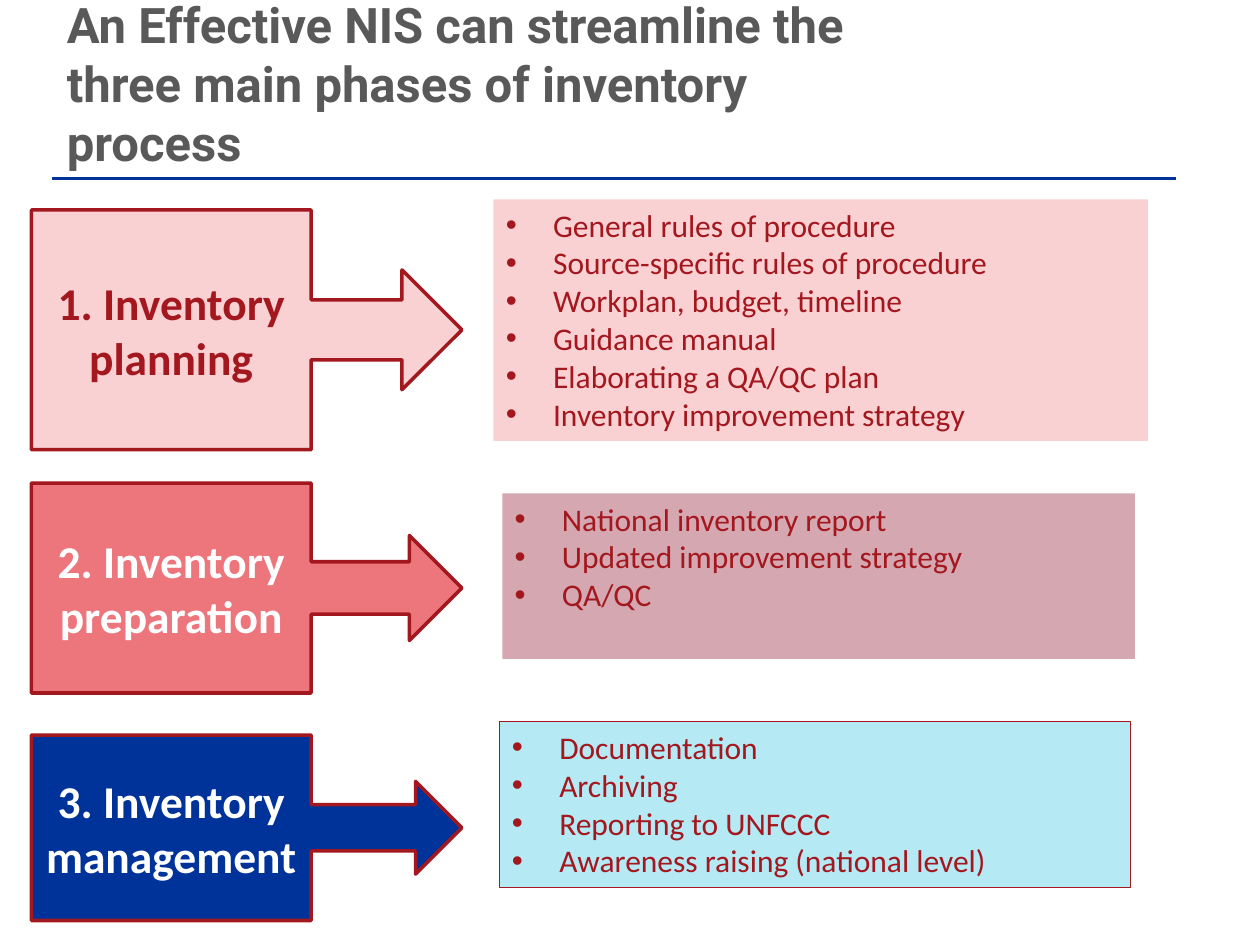
from lxml.etree import SubElement
from pptx import Presentation
from pptx.dml.color import RGBColor
from pptx.enum.shapes import MSO_CONNECTOR, MSO_SHAPE
from pptx.enum.text import MSO_ANCHOR, MSO_AUTO_SIZE, PP_ALIGN
from pptx.oxml.ns import qn
from pptx.util import Pt

COLORS = {
    "gray": "595959", "blue": "003399", "red": "A3171E", "white": "FFFFFF",
    "pink": "F9D1D3", "coral": "EC767C", "mauve": "D5A7B1", "sky": "B5E9F4",
}

# Each phase: heading, heading color, callout fill, callout box,
# list fill, list line width, list box, list items
PHASES = [
    ("1. Inventory planning", "red", "pink", (18, 120, 246, 137),
     "pink", 0, (282, 114, 374, 138),
     ["General rules of procedure", "Source-specific rules of procedure",
      "Workplan, budget, timeline", "Guidance manual",
      "Elaborating a QA/QC plan", "Inventory improvement strategy"]),
    ("2. Inventory preparation", "white", "coral", (18, 276, 246, 120),
     "mauve", 0, (287, 282, 361.5, 94.5),
     ["National inventory report", "Updated improvement strategy", "QA/QC"]),
    ("3. Inventory management", "white", "blue", (18, 420, 246, 106),
     "sky", 0.75, (285.5, 412.5, 360.5, 94.5),
     ["Documentation", "Archiving", "Reporting to UNFCCC",
      "Awareness raising (national level)"]),
]


def color(name):
    return RGBColor.from_string(COLORS[name])


def place(shape, box):
    shape.left, shape.top, shape.width, shape.height = map(Pt, box)


def add_bullet(para):
    """Give a paragraph a round bullet with a hanging indent."""
    props = para._p.get_or_add_pPr()
    props.set("marL", str(Pt(27)))
    props.set("indent", str(-Pt(27)))
    SubElement(props, qn("a:buFont"), typeface="Arial")
    SubElement(props, qn("a:buChar"), char="•")


def write(shape, lines, size, tint, font="Calibri", bold=False,
          align=PP_ALIGN.LEFT, anchor=MSO_ANCHOR.MIDDLE, bullet=False):
    frame = shape.text_frame
    frame.word_wrap = True
    frame.auto_size = MSO_AUTO_SIZE.NONE
    frame.vertical_anchor = anchor
    for index, line in enumerate(lines):
        para = frame.add_paragraph() if index else frame.paragraphs[0]
        para.alignment = align
        if bullet:
            add_bullet(para)
        run = para.add_run()
        run.text = line
        run.font.name = font
        run.font.size = Pt(size)
        run.font.bold = bold
        run.font.color.rgb = color(tint)


def add_block(slide, kind, box, fill, width):
    """Add a filled shape, with a red outline if width is not zero."""
    shape = slide.shapes.add_shape(kind, *map(Pt, box))
    shape.shadow.inherit = False
    shape.fill.solid()
    shape.fill.fore_color.rgb = color(fill)
    if width:
        shape.line.color.rgb = color("red")
        shape.line.width = Pt(width)
    else:
        shape.line.fill.background()
    return shape


def add_header(slide, box):
    title = slide.shapes.title
    place(title, box)
    write(title, ["An Effective NIS can streamline the three main phases "
                  "of inventory process"],
          28, "gray", font="Roboto", bold=True)


def add_rule(slide, left, right, top):
    rule = slide.shapes.add_connector(
        MSO_CONNECTOR.STRAIGHT, Pt(left), Pt(top), Pt(right), Pt(top))
    rule.line.color.rgb = color("blue")
    rule.line.width = Pt(2)
    SubElement(rule._element.spPr, qn("a:effectLst"))


def add_phase(slide, head, tint, fill, box, back, width, area, items):
    callout = add_block(slide, MSO_SHAPE.RIGHT_ARROW_CALLOUT, box, fill, 2)
    write(callout, [head], 26, tint, bold=True, align=PP_ALIGN.CENTER)
    panel = add_block(slide, MSO_SHAPE.RECTANGLE, area, back, width)
    write(panel, items, 18, "red", anchor=MSO_ANCHOR.TOP, bullet=True)


def main():
    deck = Presentation()
    deck.slide_width, deck.slide_height = Pt(720), Pt(540)
    slide = deck.slides.add_slide(deck.slide_layouts[5])
    add_header(slide, (31, 16, 461, 62.5))
    add_rule(slide, 30, 672, 102)
    for phase in PHASES:
        add_phase(slide, *phase)
    deck.save("out.pptx")


if __name__ == "__main__":
    main()
